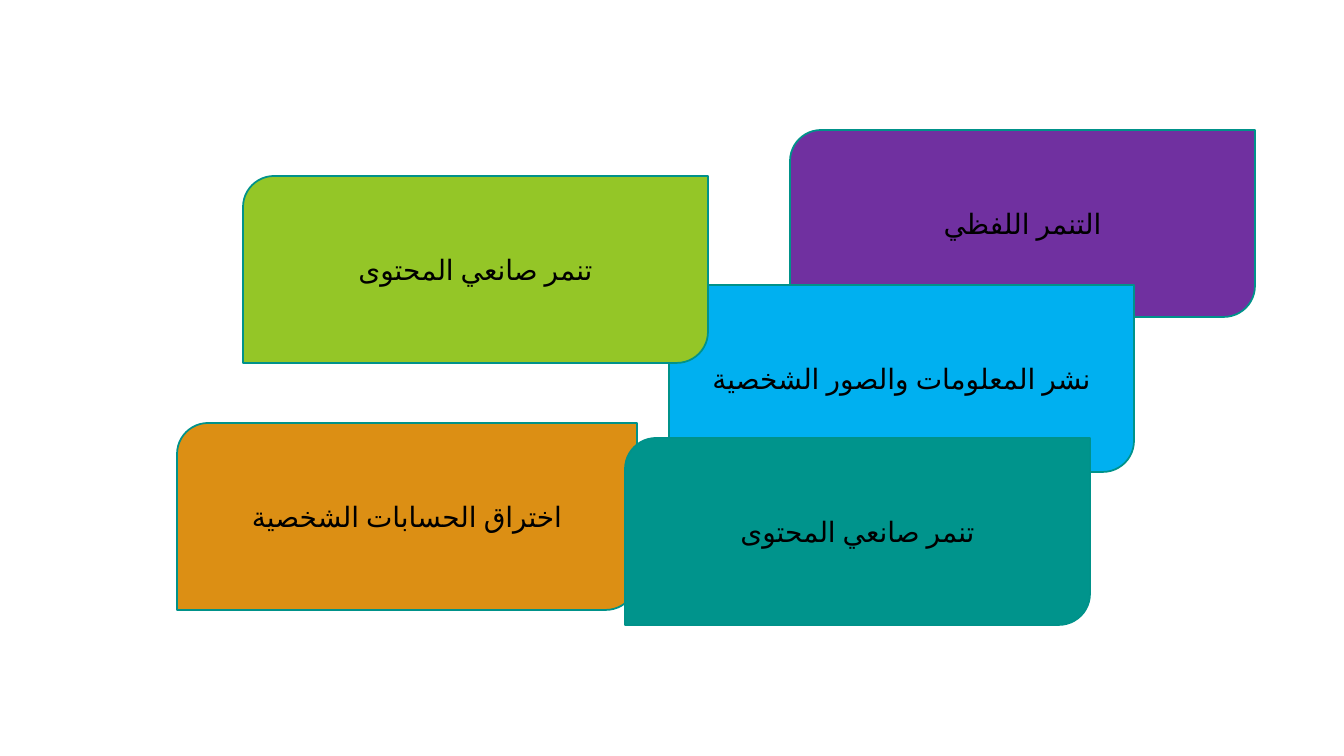
from dataclasses import dataclass

from lxml.etree import SubElement
from pptx import Presentation
from pptx.dml.color import RGBColor
from pptx.enum.lang import MSO_LANGUAGE_ID
from pptx.enum.shapes import MSO_SHAPE
from pptx.enum.text import MSO_ANCHOR, PP_ALIGN
from pptx.oxml.ns import qn
from pptx.slide import Slide
from pptx.text.text import _Paragraph
from pptx.util import Emu, Pt

PX_PER_INCH = 100.8
FONT = "League Spartan"
OUTLINE = "00928A"
CARD_HEIGHT = 187


@dataclass(frozen=True)
class BullyingCard:
    text: str
    left: int
    top: int
    fill: str
    width: int = 465


# Listed from back to front, because the cards overlap.
CARDS = [
    BullyingCard("التنمر اللفظي", 790, 130, "7030A0"),
    BullyingCard("نشر المعلومات والصور الشخصية", 669, 285, "00B0F0"),
    BullyingCard("اختراق الحسابات الشخصية", 177, 423, "DC8F14", width=460),
    BullyingCard("تنمر صانعي المحتوى", 625, 438, "00948C"),
    BullyingCard("تنمر صانعي المحتوى", 243, 176, "94C627"),
]


def px(length: int) -> Emu:
    return Emu(round(length * 914400 / PX_PER_INCH))


def color(hex_code: str) -> RGBColor:
    return RGBColor.from_string(hex_code)


def style_arabic(paragraph: _Paragraph) -> None:
    """Centre the paragraph, run it right to left and mark its font and language as Arabic."""
    paragraph.alignment = PP_ALIGN.CENTER
    paragraph.font.size = Pt(20)
    paragraph.font.color.rgb = color("000000")
    paragraph.font.name = FONT
    properties = paragraph._p.get_or_add_pPr()
    properties.set("rtl", "1")
    SubElement(properties.find(qn("a:defRPr")), qn("a:cs"), typeface=FONT)
    for run in paragraph.runs:
        run.font.language_id = MSO_LANGUAGE_ID.ARABIC


def draw_card(slide: Slide, card: BullyingCard) -> None:
    box = slide.shapes.add_shape(
        MSO_SHAPE.ROUND_2_DIAG_RECTANGLE,
        px(card.left), px(card.top), px(card.width), px(CARD_HEIGHT),
    )
    box.shadow.inherit = False
    box.fill.solid()
    box.fill.fore_color.rgb = color(card.fill)
    box.line.color.rgb = color(OUTLINE)
    box.line.width = Pt(1.25)
    frame = box.text_frame
    frame.word_wrap = True
    frame.vertical_anchor = MSO_ANCHOR.MIDDLE
    frame.text = card.text
    style_arabic(frame.paragraphs[0])


def main() -> None:
    presentation = Presentation()
    presentation.slide_width = px(1344)
    presentation.slide_height = px(756)
    slide = presentation.slides.add_slide(presentation.slide_layouts[6])
    for card in CARDS:
        draw_card(slide, card)
    presentation.save("out.pptx")


if __name__ == "__main__":
    main()
